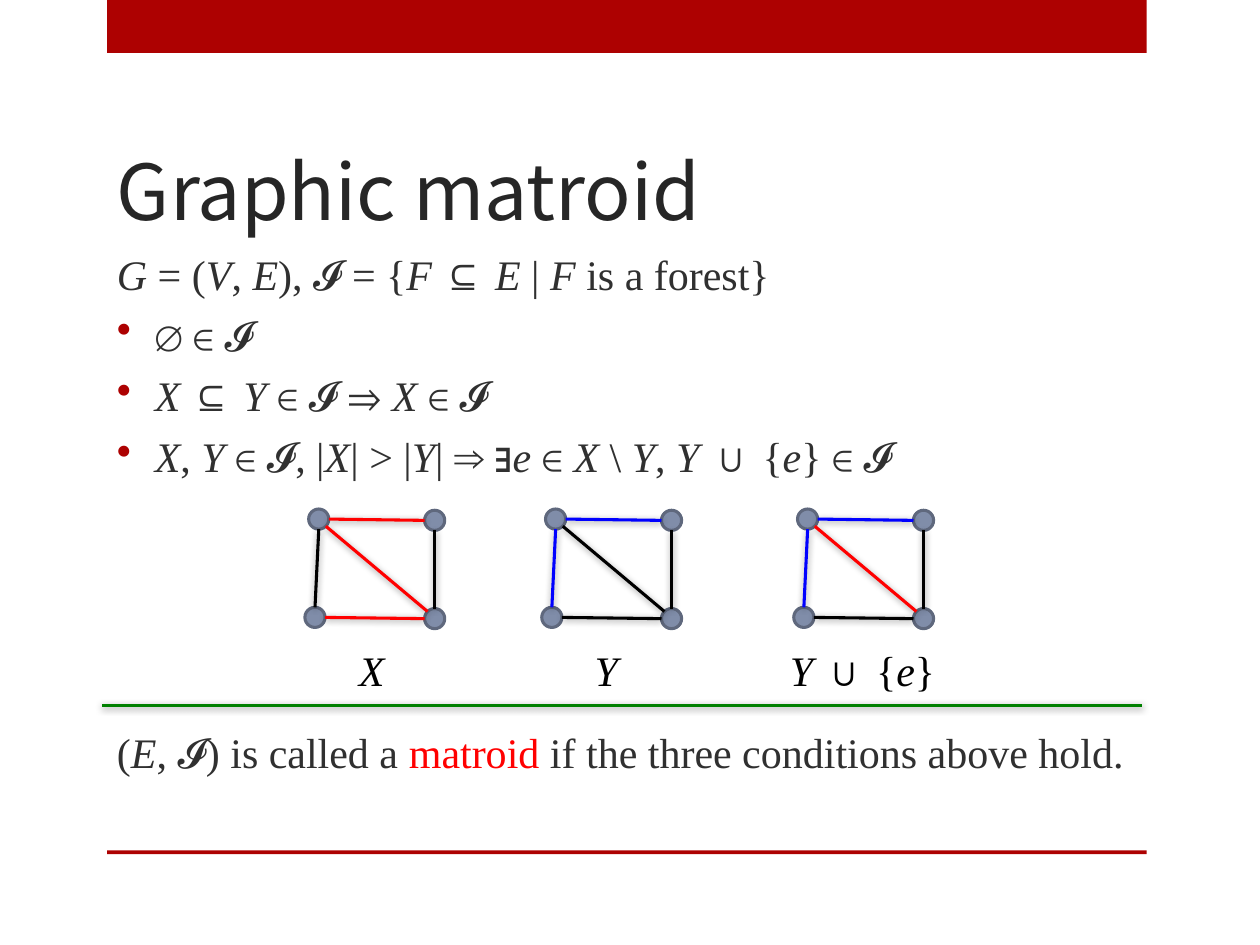
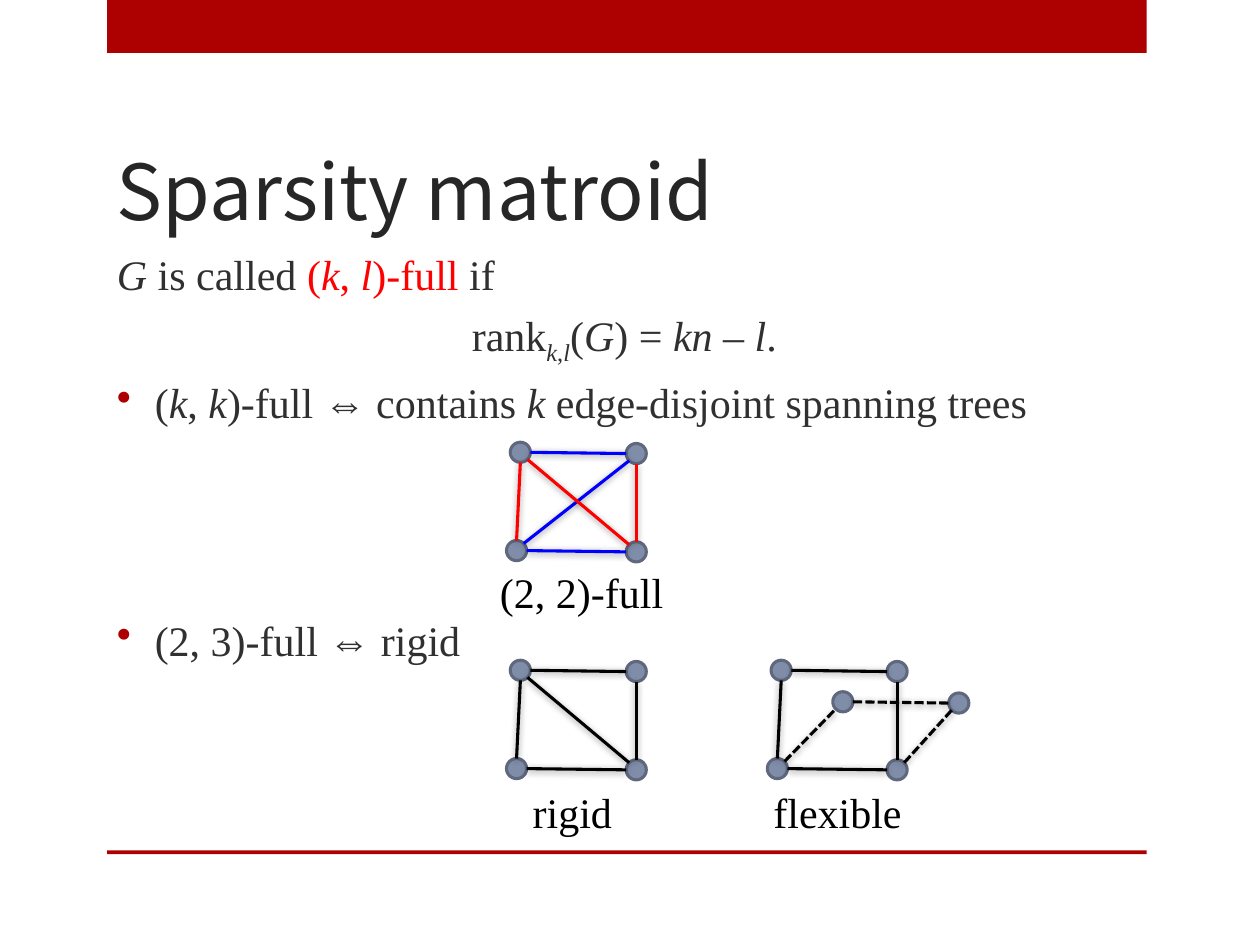
import math

from lxml import etree
from pptx import Presentation
from pptx.dml.color import RGBColor
from pptx.enum.dml import MSO_LINE
from pptx.enum.shapes import MSO_CONNECTOR, MSO_SHAPE
from pptx.enum.text import MSO_ANCHOR, MSO_AUTO_SIZE, PP_ALIGN
from pptx.oxml.ns import qn
from pptx.util import Inches, Pt

RECT, OVAL = MSO_SHAPE.RECTANGLE, MSO_SHAPE.OVAL
STRAIGHT = MSO_CONNECTOR.STRAIGHT
BOTTOM, TOP = MSO_ANCHOR.BOTTOM, MSO_ANCHOR.TOP
CENTER, LEFT = PP_ALIGN.CENTER, PP_ALIGN.LEFT
FIT_SHAPE, DASHED = MSO_AUTO_SIZE.SHAPE_TO_FIT_TEXT, MSO_LINE.SQUARE_DOT

TITLE_FONT, BODY_FONT = "Noto Sans CJK JP", "Times New Roman"
BAND, TITLE_INK, BODY_INK = "AD0101", "262626", "303030"
BLACK, RED, BLUE, GREEN = "000000", "FF0000", "0000FF", "008000"
NODE_FILL, NODE_LINE = "808DA9", "5F687D"

TITLE_BOX = (0.83, 0.75, 8.25, 1.17)
BODY_BOX = (0.83, 1.92, 8.25, 4.83)
BODY_SIZE, LINE_GAP = 24, 6
LINE_PITCH = 33.6   # one body line with its gap, in points
HANG = 0.3
STROKE = 1.75

# Node centres relative to the box of a graph
NODE = 0.16
NODES = {"NW": (0.11, 0.08), "SW": (0.08, 0.86), "SE": (1.03, 0.87), "NE": (1.03, 0.09)}
MOVED_NODES = {"NW2": (0.6, 0.33), "NE2": (1.52, 0.34)}
SIDES = ("NW-NE", "NW-SW", "NE-SE", "SW-SE")


def color(hex_string):
    return RGBColor.from_string(hex_string)


def inches(*lengths):
    return [Inches(length) for length in lengths]


def add_runs(paragraph, markup, ink, size=BODY_SIZE, font=BODY_FONT):
    """In the markup _ switches italic, ~ switches red and ^ switches subscript."""
    active = {"_": False, "~": False, "^": False}
    pieces = [["", dict(active)]]
    for char in markup:
        if char in active:
            active[char] = not active[char]
            pieces.append(["", dict(active)])
        else:
            pieces[-1][0] += char
    for text, style in pieces:
        if not text:
            continue
        run = paragraph.add_run()
        run.text = text
        run.font.name, run.font.size = font, Pt(size)
        run.font.italic = style["_"]
        run.font.color.rgb = color(RED if style["~"] else ink)
        if style["^"]:
            run.font._element.set("baseline", "-25000")


def add_text_frame(shapes, box, anchor=TOP, wrap=True):
    frame = shapes.add_textbox(*inches(*box)).text_frame
    frame.word_wrap, frame.vertical_anchor = wrap, anchor
    return frame


def add_bullet(paragraph):
    properties = paragraph._p.get_or_add_pPr()
    properties.set("marL", str(Inches(HANG)))
    properties.set("indent", str(-Inches(HANG)))
    bullet_color = etree.SubElement(properties, qn("a:buClr"))
    etree.SubElement(bullet_color, qn("a:srgbClr"), val=BAND)
    etree.SubElement(properties, qn("a:buChar"), char="•")


def add_line(shapes, start, end, ink, dashed=False):
    line = shapes.add_connector(STRAIGHT, *inches(*start, *end))
    line.line.color.rgb, line.line.width = color(ink), Pt(STROKE)
    if dashed:
        line.line.dash_style = DASHED
    # Soft shadow just below the line
    effects = etree.SubElement(line._element.spPr, qn("a:effectLst"))
    shadow = etree.SubElement(effects, qn("a:outerShdw"), blurRad=str(Pt(4)),
                              dist=str(Pt(1)), dir="5280000", rotWithShape="0")
    shade = etree.SubElement(shadow, qn("a:srgbClr"), val=BLACK)
    etree.SubElement(shade, qn("a:alpha"), val="40000")


def add_filled(shapes, kind, box, fill, outline=None):
    shape = shapes.add_shape(kind, *inches(*box))
    shape.shadow.inherit = False
    shape.fill.solid()
    shape.fill.fore_color.rgb = color(fill)
    if outline:
        shape.line.color.rgb, shape.line.width = color(outline), Pt(STROKE)
    else:
        shape.line.fill.background()


def add_frame_slide(deck, title):
    """Blank slide with the two bands and the title."""
    slide = deck.slides.add_slide(deck.slide_layouts[6])
    for top, height in ((0, 0.42), (6.75, 0.03)):
        add_filled(slide.shapes, RECT, (0.85, top, 8.25, height), BAND)
    frame = add_text_frame(slide.shapes, TITLE_BOX, BOTTOM)
    add_runs(frame.paragraphs[0], title, TITLE_INK, 44, TITLE_FONT)
    return slide


def add_body(slide, lines):
    """Each line: markup, bulleted, alignment, number of lines left free above."""
    frame = add_text_frame(slide.shapes, BODY_BOX)
    for index, (markup, bulleted, alignment, free_lines) in enumerate(lines):
        paragraph = frame.add_paragraph() if index else frame.paragraphs[0]
        paragraph.alignment = alignment
        paragraph.space_before = Pt(LINE_GAP + free_lines * LINE_PITCH)
        if bulleted:
            add_bullet(paragraph)
        add_runs(paragraph, markup, BODY_INK)


def rim_point(center, toward):
    """Point on a node's rim, at the nearest multiple of 45 degrees."""
    eighth = math.pi / 4
    angle = math.atan2(toward[1] - center[1], toward[0] - center[0])
    angle = round(angle / eighth) * eighth
    return (center[0] + NODE / 2 * math.cos(angle),
            center[1] + NODE / 2 * math.sin(angle))


def add_graph(slide, left, top, edges, label, label_box, moved=False):
    """Graph at left, top; label_box is left, top, width relative to it."""
    shapes = slide.shapes.add_group_shape().shapes
    offsets = {**NODES, **MOVED_NODES} if moved else NODES
    centers = {name: (left + x, top + y) for name, (x, y) in offsets.items()}
    for x, y in centers.values():
        add_filled(shapes, OVAL, (x - NODE / 2, y - NODE / 2, NODE, NODE),
                   NODE_FILL, NODE_LINE)
    for edge, ink in edges.items():
        start, end = (centers[name] for name in edge.split("-"))
        add_line(shapes, rim_point(start, end), rim_point(end, start), ink,
                 dashed="2" in edge)
    label_left, label_top, label_width = label_box
    frame = add_text_frame(
        shapes, (left + label_left, top + label_top, label_width, 0.5), wrap=False)
    frame.auto_size = FIT_SHAPE
    add_runs(frame.paragraphs[0], label, BLACK)


def edge_colors(names, **inks):
    """Black edges, except the sets given under red= and blue=."""
    edges = dict.fromkeys(names, BLACK)
    for ink, chosen in ((RED, inks.get("red", ())), (BLUE, inks.get("blue", ()))):
        edges.update(dict.fromkeys(chosen, ink))
    return edges


def build_graphic_matroid(deck):
    slide = add_frame_slide(deck, "Graphic matroid")
    add_body(slide, [
        ("_G_ = (_V_, _E_), 𝓘 = {_F_ ⊆ _E_ | _F _is a forest}", False, LEFT, 0),
        ("∅ ∈ 𝓘", True, LEFT, 0),
        ("_X_ ⊆ _Y_ ∈ 𝓘 ⇒ _X_ ∈ 𝓘", True, LEFT, 0),
        ("_X_, _Y_ ∈ 𝓘, |_X_| > |_Y_| ⇒ ∃_e _∈ _X_ \\ _Y_, _Y_ ∪ {_e_} ∈ 𝓘",
         True, LEFT, 0),
        ("(_E_, 𝓘) is called a ~matroid ~if the three conditions above hold.",
         False, LEFT, 4),
    ])
    add_line(slide.shapes, (0.81, 5.6), (9.06, 5.6), GREEN)

    # Forests X and Y, and Y extended by one edge of X
    names = SIDES + ("NW-SE",)
    y_edges = ("NW-NE", "NW-SW")
    forests = [
        (2.42, {"red": ("NW-NE", "SW-SE", "NW-SE")}, "_X_", 0.33, 0.48),
        (4.3, {"blue": y_edges}, "_Y_", 0.32, 0.45),
        (6.3, {"blue": y_edges, "red": ("NW-SE",)}, "_Y_ ∪ {_e_}", -0.13, 1.41),
    ]
    for left, inks, label, label_left, label_width in forests:
        add_graph(slide, left, 4.04, edge_colors(names, **inks), label,
                  (label_left, 1.03, label_width))


def build_sparsity_matroid(deck):
    slide = add_frame_slide(deck, "Sparsity matroid")
    add_body(slide, [
        ("_G_ is called ~(_k_, _l_)-full ~if", False, LEFT, 0),
        ("rank^_k_,_l_^(_G_) = _kn_ – _l_.", False, CENTER, 0),
        ("(_k_, _k_)-full ⇔ contains _k_ edge-disjoint spanning trees", True, LEFT, 0),
        ("(2, 3)-full ⇔ rigid", True, LEFT, 3),
    ])

    # Two edge-disjoint spanning trees
    trees = edge_colors(("SW-NE",) + SIDES + ("NW-SE",),
                        blue=("SW-NE", "NW-NE", "SW-SE"),
                        red=("NW-SW", "NE-SE", "NW-SE"))
    add_graph(slide, 4.02, 3.51, trees, "(2, 2)-full", (-0.15, 0.94, 1.5))

    # Rigid and flexible frameworks
    add_graph(slide, 4.02, 5.24, edge_colors(SIDES + ("NW-SE",)), "rigid",
              (0.11, 0.95, 0.84))
    add_graph(slide, 6.09, 5.24,
              edge_colors(SIDES + ("NW2-NE2", "SW-NW2", "SE-NE2")), "flexible",
              (-0.05, 0.95, 1.23), moved=True)


def main():
    deck = Presentation()
    deck.slide_width, deck.slide_height = inches(10, 7.5)
    build_graphic_matroid(deck)
    build_sparsity_matroid(deck)
    deck.save("out.pptx")


if __name__ == "__main__":
    main()
